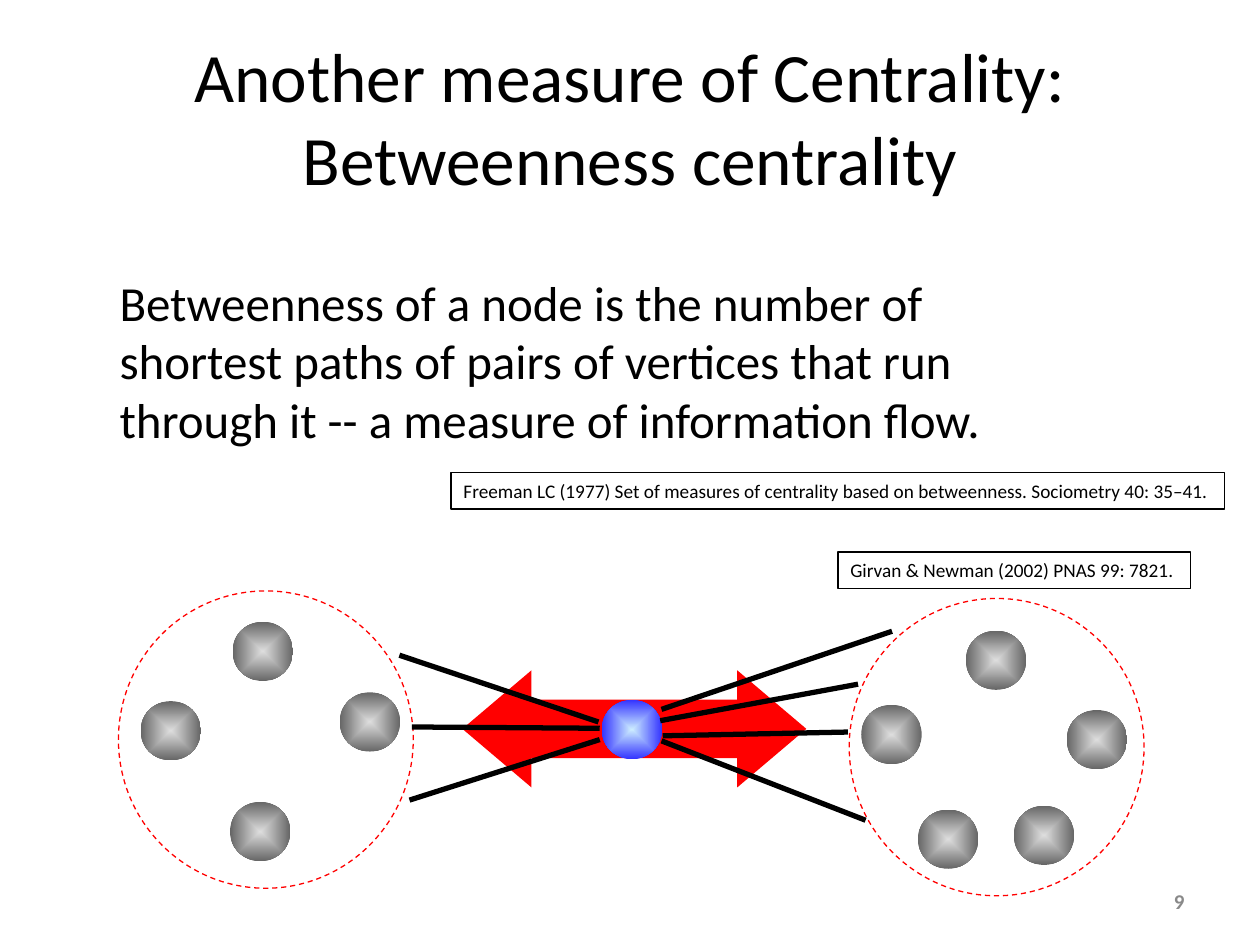
"""Build the slide on betweenness centrality."""
from lxml.etree import SubElement
from pptx import Presentation
from pptx.dml.color import RGBColor
from pptx.enum.dml import MSO_LINE
from pptx.enum.shapes import MSO_CONNECTOR, MSO_SHAPE
from pptx.enum.text import MSO_ANCHOR as ANCHOR, PP_ALIGN as ALIGN
from pptx.oxml import parse_xml
from pptx.oxml.ns import nsdecls, qn
from pptx.util import Pt

PX = 9144
FONT = "Calibri"
COLORS = {
    "text": "000000", "number": "898989", "red": "FF0000",
    "blue_light": "CCECFF", "blue_dark": "3333FF",
    "gray_light": "DDDDDD", "gray_dark": "666666",
}

TITLE = ["Another measure of Centrality:", "Betweenness centrality"]
TITLE_BOX = (50, 30, 900, 125)
DEFINITION = (
    "Betweenness of a node is the number of shortest paths of pairs of "
    "vertices that run through it -- a measure of information flow."
)
CITATIONS = [
    ("Freeman LC (1977) Set of measures of centrality based on betweenness. "
     "Sociometry 40: 35–41.", (358, 375, 614, 29), True),
    ("Girvan & Newman (2002) PNAS 99: 7821.", (665, 438, 280, 29), False),
]
FLOW_ARROW = (367, 532, 273, 93)
NODE_SIZE = (47, 48)
HUB = (478, 555)
LEFT_NODES = [(185, 493), (270, 549), (112, 556), (183, 636)]
RIGHT_NODES = [(767, 500), (805, 639), (729, 642), (847, 563), (684, 559)]
GROUP_SIZE = (234, 236)
GROUPS = [(674, 475), (94, 469)]
PATHS = [
    ((317, 520), (475, 573)), ((327, 577), (476, 578)),
    ((325, 635), (476, 587)), ((525, 563), (708, 501)),
    ((524, 572), (681, 543)), ((526, 584), (673, 581)),
    ((525, 588), (687, 651)),
]


def emu(values):
    return [value * PX for value in values]


def rgb(name):
    return RGBColor.from_string(COLORS[name])


def add_run(paragraph, text, size, color="text", bold=False):
    run = paragraph.add_run()
    run.text = text
    run.font.name = FONT
    run.font.size = Pt(size)
    run.font.bold = bold
    run.font.color.rgb = rgb(color)


def write(shape, text, size, color="text", bold=False, align=ALIGN.LEFT,
          anchor=ANCHOR.TOP, wrap=True):
    frame = shape.text_frame
    frame.word_wrap = wrap
    frame.vertical_anchor = anchor
    paragraph = frame.paragraphs[0]
    paragraph.alignment = align
    add_run(paragraph, text, size, color, bold)


def add_shape(slide, kind, box):
    shape = slide.shapes.add_shape(kind, *emu(box))
    shape.shadow.inherit = False
    shape.fill.background()
    shape.line.fill.background()
    return shape


def add_node(slide, position, tone):
    node = add_shape(slide, MSO_SHAPE.OVAL, position + NODE_SIZE)
    node.rotation = 90
    node.fill.gradient()
    for stop, shade in zip(node.fill.gradient_stops, ("light", "dark")):
        stop.color.rgb = rgb(f"{tone}_{shade}")
    gradient = node._element.spPr.find(qn("a:gradFill"))
    gradient.replace(gradient.find(qn("a:lin")), parse_xml(
        f'<a:path {nsdecls("a")} path="shape"><a:fillToRect '
        'l="50000" t="50000" r="50000" b="50000"/></a:path>'))


def add_title(slide):
    title = slide.shapes.title
    title.left, title.top, title.width, title.height = emu(TITLE_BOX)
    title.text_frame.vertical_anchor = ANCHOR.MIDDLE
    paragraph = title.text_frame.paragraphs[0]
    paragraph.alignment = ALIGN.CENTER
    for index, line in enumerate(TITLE):
        if index:
            paragraph.add_line_break()
        add_run(paragraph, line, 39.6)


def add_diagram(slide):
    arrow = add_shape(slide, MSO_SHAPE.LEFT_RIGHT_ARROW, FLOW_ARROW)
    arrow.adjustments[0], arrow.adjustments[1] = 0.5, 0.59 * 1.25
    arrow.adjustments[1] = 0.59
    arrow.fill.solid()
    arrow.fill.fore_color.rgb = rgb("red")
    add_node(slide, HUB, "blue")
    for position in LEFT_NODES + RIGHT_NODES:
        add_node(slide, position, "gray")
    for position in GROUPS:
        group = add_shape(slide, MSO_SHAPE.OVAL, position + GROUP_SIZE)
        group.line.color.rgb = rgb("red")
        group.line.width = Pt(0.75)
        group.line.dash_style = MSO_LINE.DASH
    for start, end in PATHS:
        path = slide.shapes.add_connector(
            MSO_CONNECTOR.STRAIGHT, *emu(start + end))
        path.line.color.rgb = rgb("text")
        path.line.width = Pt(3)
        SubElement(path._element.spPr, qn("a:effectLst"))


def add_texts(slide):
    definition = slide.shapes.add_textbox(*emu((85, 211, 752, 150)))
    write(definition, DEFINITION, 28)
    for text, box, wrap in CITATIONS:
        citation = add_shape(slide, MSO_SHAPE.RECTANGLE, box)
        citation.line.color.rgb = rgb("text")
        citation.line.width = Pt(1)
        write(citation, text, 11, anchor=ANCHOR.MIDDLE, wrap=wrap)
    number = slide.shapes.add_textbox(*emu((717, 695, 233, 40)))
    write(number, "9", 12, "number", True, ALIGN.RIGHT, ANCHOR.MIDDLE)


def main():
    presentation = Presentation()
    presentation.slide_width, presentation.slide_height = emu((1000, 750))
    slide = presentation.slides.add_slide(presentation.slide_layouts[5])
    add_title(slide)
    add_diagram(slide)
    add_texts(slide)
    presentation.save("out.pptx")


if __name__ == "__main__":
    main()
